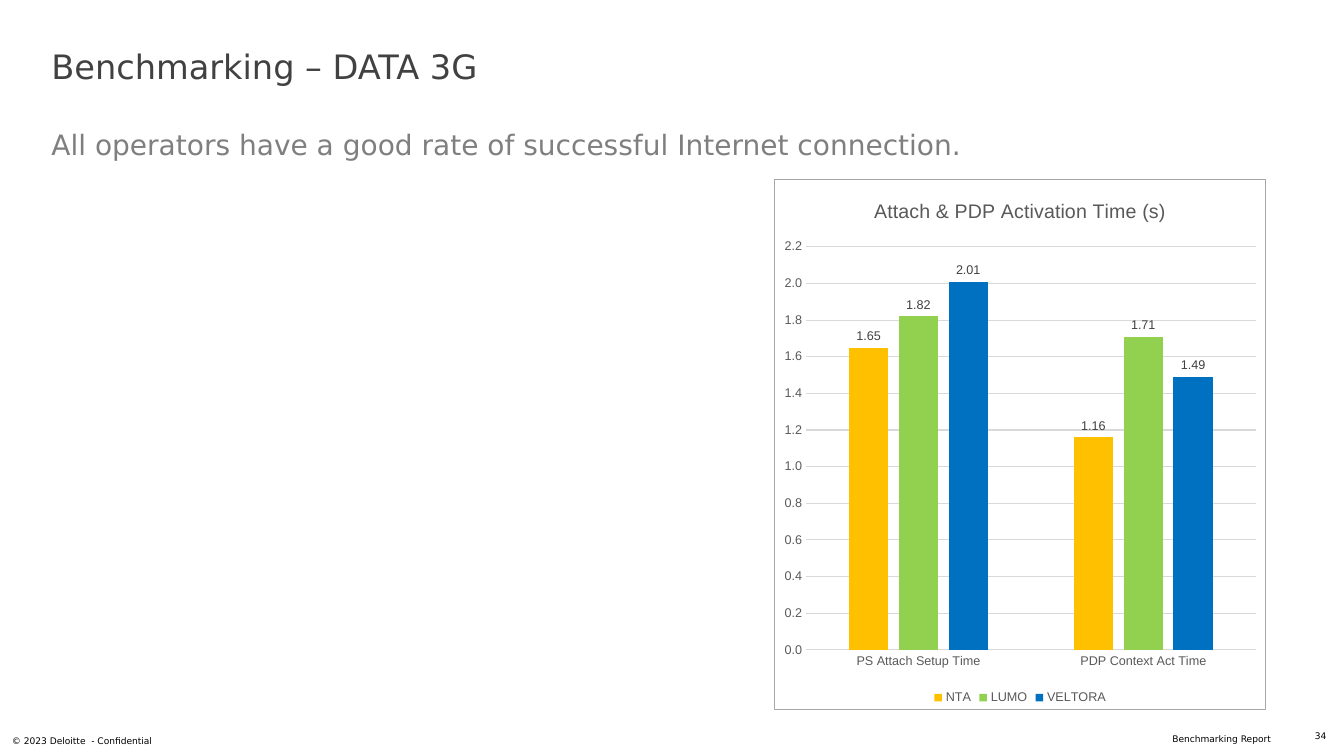
from lxml import etree
from pptx import Presentation
from pptx.chart.data import CategoryChartData
from pptx.dml.color import RGBColor
from pptx.enum.chart import XL_CHART_TYPE, XL_LABEL_POSITION, XL_LEGEND_POSITION, XL_TICK_MARK
from pptx.enum.text import MSO_ANCHOR, MSO_AUTO_SIZE, PP_ALIGN
from pptx.oxml import parse_xml
from pptx.util import Pt

COLUMN = XL_CHART_TYPE.COLUMN_CLUSTERED
OUTSIDE = XL_LABEL_POSITION.OUTSIDE_END
BOTTOM = XL_LEGEND_POSITION.BOTTOM
NO_TICK = XL_TICK_MARK.NONE
TOP = MSO_ANCHOR.TOP
NO_FIT = MSO_AUTO_SIZE.NONE
LEFT, RIGHT = PP_ALIGN.LEFT, PP_ALIGN.RIGHT
SANS, ARIAL = "DejaVu Sans", "Arial"
GREY, PALE = "595959", "D9D9D9"
CHART_NS = "http://schemas.openxmlformats.org/drawingml/2006/chart"
DRAW_NS = "http://schemas.openxmlformats.org/drawingml/2006/main"

CATS = ["PS Attach Setup Time", "PDP Context Act Time"]
SERIES = [
    ("NTA", "FFC000", (1.65, 1.16)),
    ("LUMO", "92D050", (1.82, 1.71)),
    ("VELTORA", "0070C0", (2.01, 1.49)),
]
FOOTERS = [
    ("Benchmarking Report", (837.4, 524.2, 122.6, 8), LEFT),
    ("34", (923, 522, 24.5, 8), RIGHT),
    ("© 2023 Deloitte  - Confidential", (8.6, 525.6, 324, 8), LEFT),
]


def rgb(code):
    """Turn a hex string into a colour."""
    return RGBColor.from_string(code)


def style(font, size, color, face=ARIAL):
    """Set size, colour and typeface of a font."""
    font.size, font.name, font.bold = Pt(size), face, False
    font.color.rgb = rgb(color)


def write(para, text, size=6.5, color="000000", face=SANS, align=LEFT, before=0):
    """Fill a paragraph with formatted text."""
    para.alignment = align
    if before:
        para.space_before = Pt(before)
    run = para.add_run()
    run.text = text
    style(run.font, size, color, face)


def setup(frame):
    """Give a text frame no insets, wrapping and top anchoring."""
    frame.margin_left = frame.margin_right = 0
    frame.margin_top = frame.margin_bottom = 0
    frame.word_wrap, frame.auto_size = True, NO_FIT
    frame.vertical_anchor = TOP
    return frame


def add_title(slide):
    """Fill the title placeholder with heading and message."""
    title = slide.shapes.title
    title.left, title.top, title.width, title.height = map(Pt, (36.7, 33, 886, 27))
    frame = setup(title.text_frame)
    write(frame.paragraphs[0], "Benchmarking – DATA 3G", size=24, color="414141")
    write(frame.add_paragraph(),
          "All operators have a good rate of successful Internet connection.",
          size=20, color="7F7F7F", before=29)


def add_note(slide, text, box, align):
    """Add one small footer text."""
    shape = slide.shapes.add_textbox(*map(Pt, box))
    write(setup(shape.text_frame).paragraphs[0], text, align=align)


def add_frame(chart):
    """Give the chart area a white fill and a grey border."""
    area = parse_xml(
        f'<c:spPr xmlns:c="{CHART_NS}" xmlns:a="{DRAW_NS}">'
        '<a:solidFill><a:srgbClr val="FFFFFF"/></a:solidFill>'
        '<a:ln w="9525"><a:solidFill><a:srgbClr val="A6A6A6"/></a:solidFill></a:ln>'
        '</c:spPr>')
    chart.element.find(etree.QName(CHART_NS, "chart").text).addnext(area)


def set_line(line, color):
    """Draw a thin line in one colour."""
    line.color.rgb, line.width = rgb(color), Pt(0.75)


def set_axes(chart):
    """Format both axes and the grid."""
    value, cat = chart.value_axis, chart.category_axis
    for axis in (value, cat):
        axis.major_tick_mark = axis.minor_tick_mark = NO_TICK
        style(axis.tick_labels.font, 9, GREY)
    cat.has_major_gridlines = False
    set_line(cat.format.line, PALE)
    value.minimum_scale, value.maximum_scale, value.major_unit = 0, 2.2, 0.2
    value.tick_labels.number_format = "0.0"
    value.tick_labels.number_format_is_linked = False
    value.format.line.fill.background()
    set_line(value.major_gridlines.format.line, PALE)


def set_bars(plot):
    """Colour the bars and label them."""
    plot.gap_width, plot.overlap, plot.vary_by_categories = 219, -27, False
    for bars, (_, color, _) in zip(plot.series, SERIES):
        bars.format.fill.solid()
        bars.format.fill.fore_color.rgb = rgb(color)
        labels = bars.data_labels
        labels.show_value, labels.position = True, OUTSIDE
        labels.number_format, labels.number_format_is_linked = "0.00", False
        style(labels.font, 9, "404040")


def add_columns(slide):
    """Add the activation time chart."""
    data = CategoryChartData(number_format="0.00")
    data.categories = CATS
    for name, _, vals in SERIES:
        data.add_series(name, vals)
    box = map(Pt, (553, 127.6, 351.3, 379.3))
    chart = slide.shapes.add_chart(COLUMN, *box, data).chart
    style(chart.font, 10, "000000")
    chart.has_title = True
    write(chart.chart_title.text_frame.paragraphs[0],
          "Attach & PDP Activation Time (s)",
          size=14, color=GREY, face=ARIAL, align=None)
    chart.has_legend = True
    chart.legend.position, chart.legend.include_in_layout = BOTTOM, False
    style(chart.legend.font, 9, GREY)
    set_axes(chart)
    set_bars(chart.plots[0])
    add_frame(chart)


def main():
    """Build and save the slide."""
    deck = Presentation()
    deck.slide_width, deck.slide_height = Pt(960), Pt(540)
    slide = deck.slides.add_slide(deck.slide_layouts[5])
    add_title(slide)
    for note in FOOTERS:
        add_note(slide, *note)
    add_columns(slide)
    deck.save("out.pptx")


if __name__ == "__main__":
    main()
